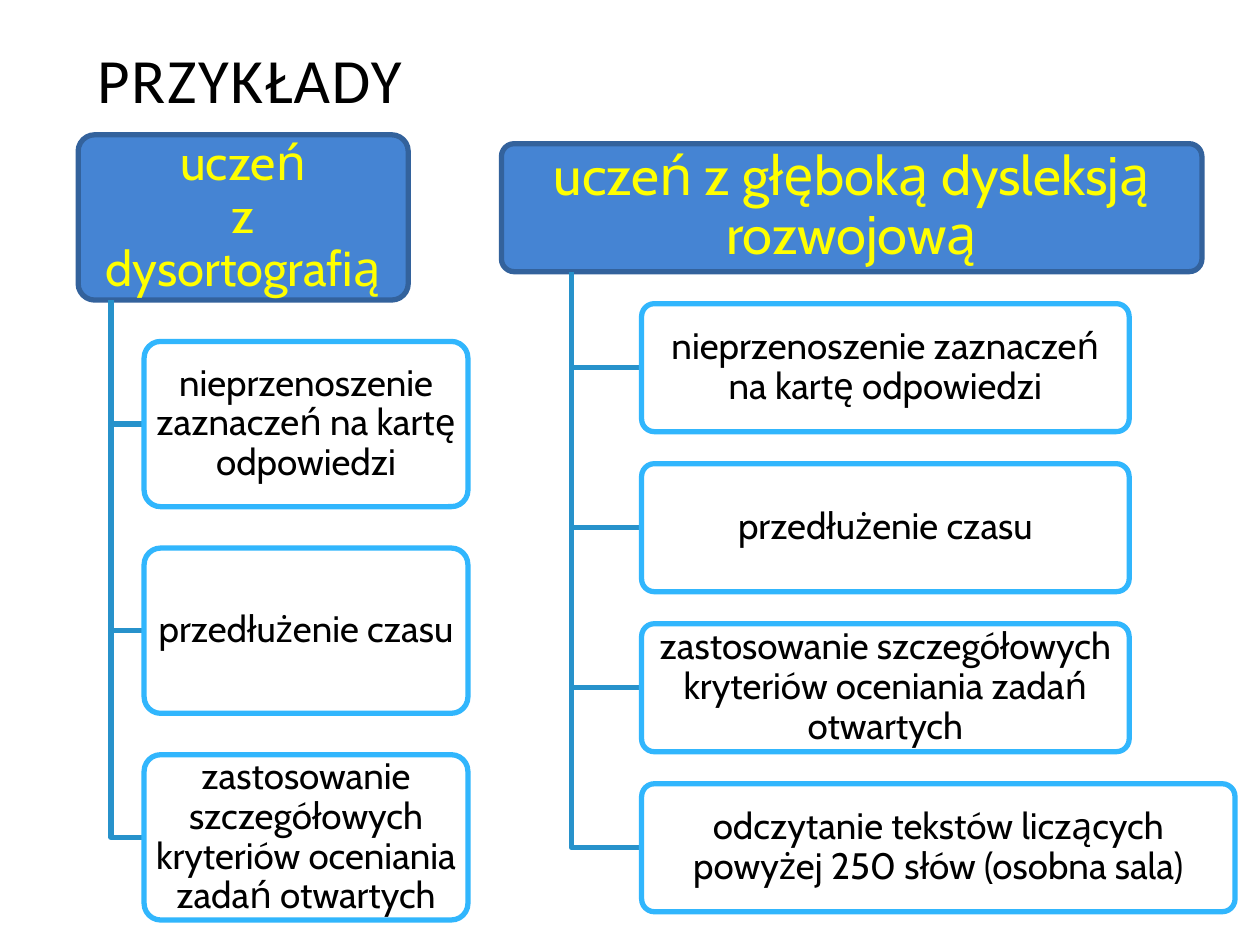
from lxml import etree
from pptx import Presentation
from pptx.dml.color import RGBColor
from pptx.enum.shapes import MSO_SHAPE
from pptx.enum.text import MSO_ANCHOR, MSO_AUTO_SIZE, PP_ALIGN
from pptx.oxml.ns import qn
from pptx.util import Inches, Pt

ROUND = MSO_SHAPE.ROUNDED_RECTANGLE
MIDDLE = MSO_ANCHOR.MIDDLE
FIXED = MSO_AUTO_SIZE.NONE
LEFT, CENTER = PP_ALIGN.LEFT, PP_ALIGN.CENTER

COLORS = {
    "head": "4584D3", "edge": "33629C", "label": "FFFF00",
    "card": "FFFFFF", "rim": "31B6FD", "branch": "2792CB", "ink": "000000",
}
MARKS = "nieprzenoszenie zaznaczeń na kartę odpowiedzi"
TIME = "przedłużenie czasu"
RULES = "zastosowanie szczegółowych kryteriów oceniania zadań otwartych"
READ = "odczytanie tekstów liczących powyżej 250 słów (osobna sala)"


class Deck:
    """Hold the style and the current slide, and draw its elements."""

    def __init__(self):
        self.show = Presentation()
        self.show.slide_width, self.show.slide_height = Inches(10), Inches(7.5)
        self.slide = self.show.slides.add_slide(self.show.slide_layouts[5])

    def color(self, name):
        return RGBColor.from_string(COLORS[name])

    def label(self, frame, text, font, size, ink, align, space):
        frame.text = text
        frame.word_wrap = True
        frame.auto_size = FIXED
        frame.vertical_anchor = MIDDLE
        for para in frame.paragraphs:
            para.alignment, para.line_spacing = align, space
            for run in para.runs:
                run.font.name, run.font.size = font, Pt(size)
                run.font.color.rgb = self.color(ink)

    def title(self, text):
        shape = self.slide.shapes.title
        shape.left, shape.top = Inches(0.67), Inches(0.21)
        shape.width, shape.height = Inches(9), Inches(0.94)
        self.label(shape.text_frame, text, "Calibri", 36, "ink", LEFT, 0.8)
        for run in shape.text_frame.paragraphs[0].runs:
            run.font._element.set("spc", "100")

    def stroke(self, shape, name):
        shape.shadow.inherit = False
        shape.line.color.rgb = self.color(name)
        shape.line.width = Pt(3)

    def box(self, area, text, size, fill, edge, ink, pad):
        shape = self.slide.shapes.add_shape(ROUND, *map(Inches, area))
        shape.adjustments[0] = 0.1
        shape.fill.solid()
        shape.fill.fore_color.rgb = self.color(fill)
        self.stroke(shape, edge)
        frame = shape.text_frame
        frame.margin_left = frame.margin_right = Inches(pad)
        frame.margin_top = frame.margin_bottom = Inches(pad * 0.7)
        self.label(frame, text, "Cabin", size, ink, CENTER, 0.9)
        return shape

    def card(self, area, text):
        shape = self.box(area, text, 21, "card", "rim", "ink", 0.04)
        tint = shape._element.spPr.find(qn("a:solidFill"))[0]
        etree.SubElement(tint, qn("a:alpha")).set("val", "90000")

    def branch(self, x, top, end, low):
        start, right, down = Inches(x), Inches(end), Inches(low)
        pen = self.slide.shapes.build_freeform(start, Inches(top))
        pen.add_line_segments([(start, down), (right, down)], close=False)
        shape = pen.convert_to_shape()
        shape.fill.background()
        self.stroke(shape, "branch")

    def tree(self, left, top, wide, step, head, size, cards):
        high = step * 0.8
        trunk, side = left + wide * 0.1, left + wide * 0.2
        self.box((left, top, wide, high), head, size,
                 "head", "edge", "label", 0.06)
        for row, (text, span) in enumerate(cards, 1):
            y = top + row * step
            self.branch(trunk, top + high, side, y + high / 2)
            self.card((side, y, span, high), text)

    def save(self):
        self.show.save("out.pptx")


def main():
    deck = Deck()
    deck.title("PRZYKŁADY")
    deck.tree(0.62, 1.07, 2.62, 1.64, "uczeń\vz dysortografią", 28,
              [(text, 2.57) for text in (MARKS, TIME, RULES)])
    deck.tree(3.98, 1.14, 5.56, 1.27, "uczeń z głęboką dysleksją rozwojową", 31,
              [(MARKS, 3.87), (TIME, 3.87), (RULES, 3.87), (READ, 4.71)])
    deck.save()


if __name__ == "__main__":
    main()
